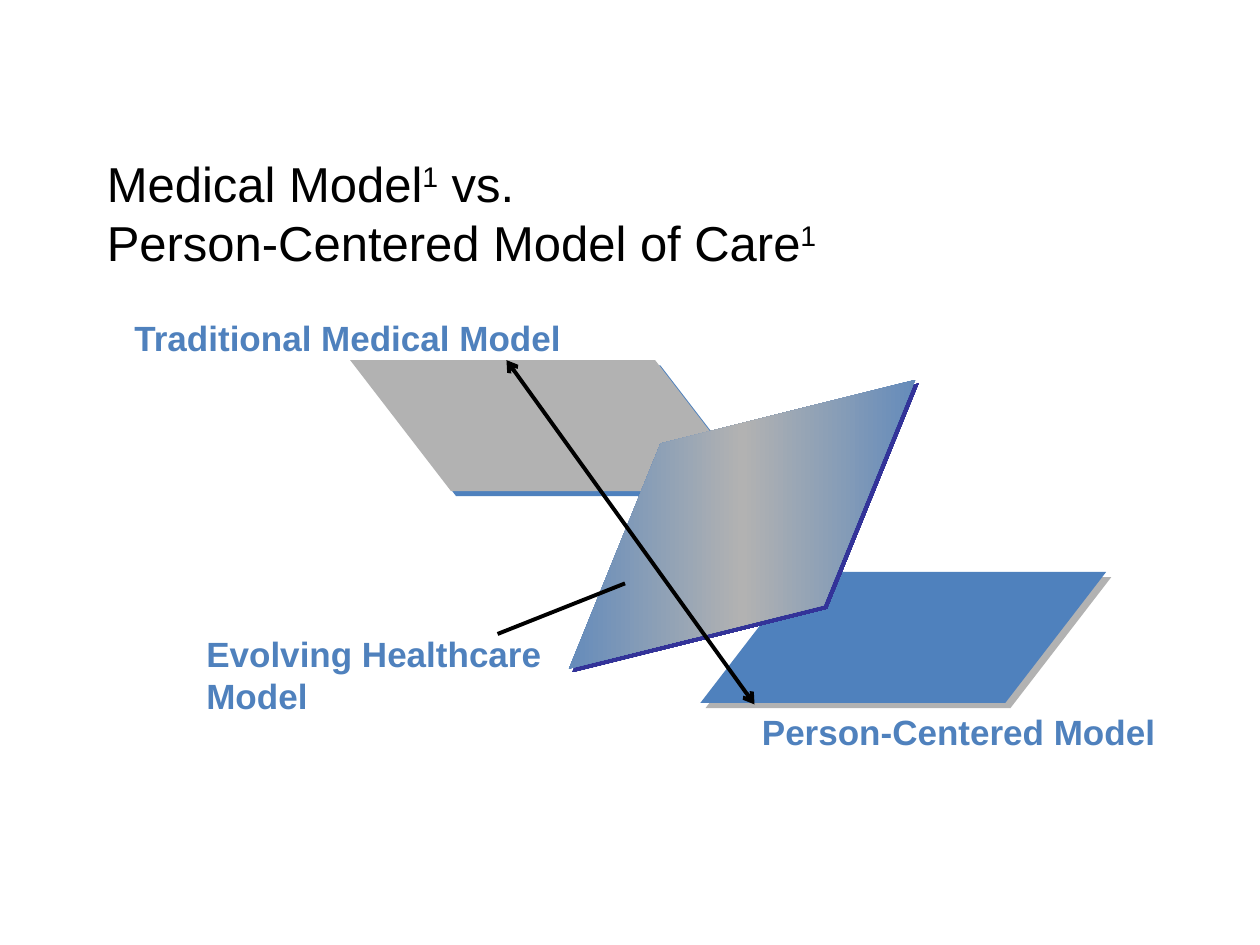
import copy
import lxml.etree
import pptx
import pptx.util
import pptx.dml.color
import pptx.enum.shapes
import pptx.enum.text
import pptx.oxml
import pptx.oxml.ns
from pptx.util import Cm

BLUE, GREY, NAVY, BLACK = "4F81BD", "B2B2B2", "333399", "000000"
qn = pptx.oxml.ns.qn


def hue(code):
    return pptx.dml.color.RGBColor.from_string(code)


def write(para, text, size=20, color=BLUE, bold=False, raised=False):
    run = para.add_run()
    run.text = text
    run.font.name = "Arial"
    run.font.size = pptx.util.Pt(size)
    run.font.bold = bold
    run.font.color.rgb = hue(color)
    if raised:
        run.font._element.set("baseline", "30000")


deck = pptx.Presentation()
deck.slide_width, deck.slide_height = Cm(25.4), Cm(19.05)
slide = deck.slides.add_slide(deck.slide_layouts[5])
shapes = slide.shapes

# Title with raised reference marks
title = shapes.title
title.left, title.top, title.width, title.height = Cm(1.9), Cm(2.97), Cm(22.23), Cm(2.34)
frame = title.text_frame
frame.auto_size = pptx.enum.text.MSO_AUTO_SIZE.NONE
frame.vertical_anchor = pptx.enum.text.MSO_ANCHOR.TOP
para = frame.paragraphs[0]
para.alignment = pptx.enum.text.PP_ALIGN.LEFT
look = {"size": 28, "color": BLACK}
write(para, "Medical Model", **look)
write(para, "1", raised=True, **look)
write(para, " vs. ", **look)
para.add_line_break()
write(para, "Person-Centered Model of Care", **look)
write(para, "1", raised=True, **look)

# Planes: left, top, height, slant, fill (None is a gradient), shadow, shadow distance, turn, flip
planes = [
    (14.12, 11.53, 2.64, 0.77, BLUE, GREY, 4.2, 0, False),
    (7.06, 7.26, 2.64, 0.77, GREY, BLUE, 4.2, 0, True),
    (10.87, 8.59, 3.96, 0.73, None, NAVY, 2.8, -14, False),
]
for left, top, height, slant, fill, shade, dist, turn, flip in planes:
    plane = shapes.add_shape(pptx.enum.shapes.MSO_SHAPE.PARALLELOGRAM,
                             Cm(left), Cm(top), Cm(8.18), Cm(height))
    plane.adjustments[0] = slant
    plane.rotation = turn
    plane.line.fill.background()
    props = plane._element.spPr
    if flip:
        props.find(qn("a:xfrm")).set("flipH", "1")
    if fill:
        plane.fill.solid()
        plane.fill.fore_color.rgb = hue(fill)
    else:
        plane.fill.gradient()
        plane.fill.gradient_angle = 0
        grad = props.find(qn("a:gradFill"))
        grad.set("rotWithShape", "0")
        stops = grad.find(qn("a:gsLst"))
        stops.insert(1, copy.deepcopy(stops[0]))
        for stop, place, code in zip(plane.fill.gradient_stops, (0, 0.5, 1), (BLUE, GREY, BLUE)):
            stop.position = place
            stop.color.rgb = hue(code)
    plane.shadow.inherit = False
    props.find(qn("a:effectLst")).append(pptx.oxml.parse_xml(
        f'<a:outerShdw {pptx.oxml.ns.nsdecls("a")} dist="{pptx.util.Pt(dist)}" dir="2700000"'
        f' algn="ctr" rotWithShape="0"><a:srgbClr val="{shade}"/></a:outerShdw>'))

# Labels
labels = [
    ("Traditional Medical Model", 2.46, 6.25, 10.92, 1.09),
    ("Person-Centered Model", 15.11, 14.2, 10.49, 1.09),
    ("Evolving Healthcare Model", 3.91, 12.62, 8.69, 1.96),
]
for text, *place in labels:
    frame = shapes.add_textbox(*map(Cm, place)).text_frame
    frame.word_wrap = True
    frame.auto_size = pptx.enum.text.MSO_AUTO_SIZE.SHAPE_TO_FIT_TEXT
    write(frame.paragraphs[0], text, bold=True)

# Double arrow between the models, and the pointer to the middle plane
lines = [
    (10.21, 7.26, 15.21, 14.2, True),
    (10.03, 12.78, 12.6, 11.76, False),
]
for *ends, heads in lines:
    line = shapes.add_connector(pptx.enum.shapes.MSO_CONNECTOR.STRAIGHT, *map(Cm, ends))
    line.line.color.rgb = hue(BLACK)
    line.line.width = pptx.util.Pt(2.25)
    props = line._element.spPr
    if heads:
        for tag in ("a:headEnd", "a:tailEnd"):
            lxml.etree.SubElement(props.find(qn("a:ln")), qn(tag), type="arrow")
    lxml.etree.SubElement(props, qn("a:effectLst"))

deck.save("out.pptx")
